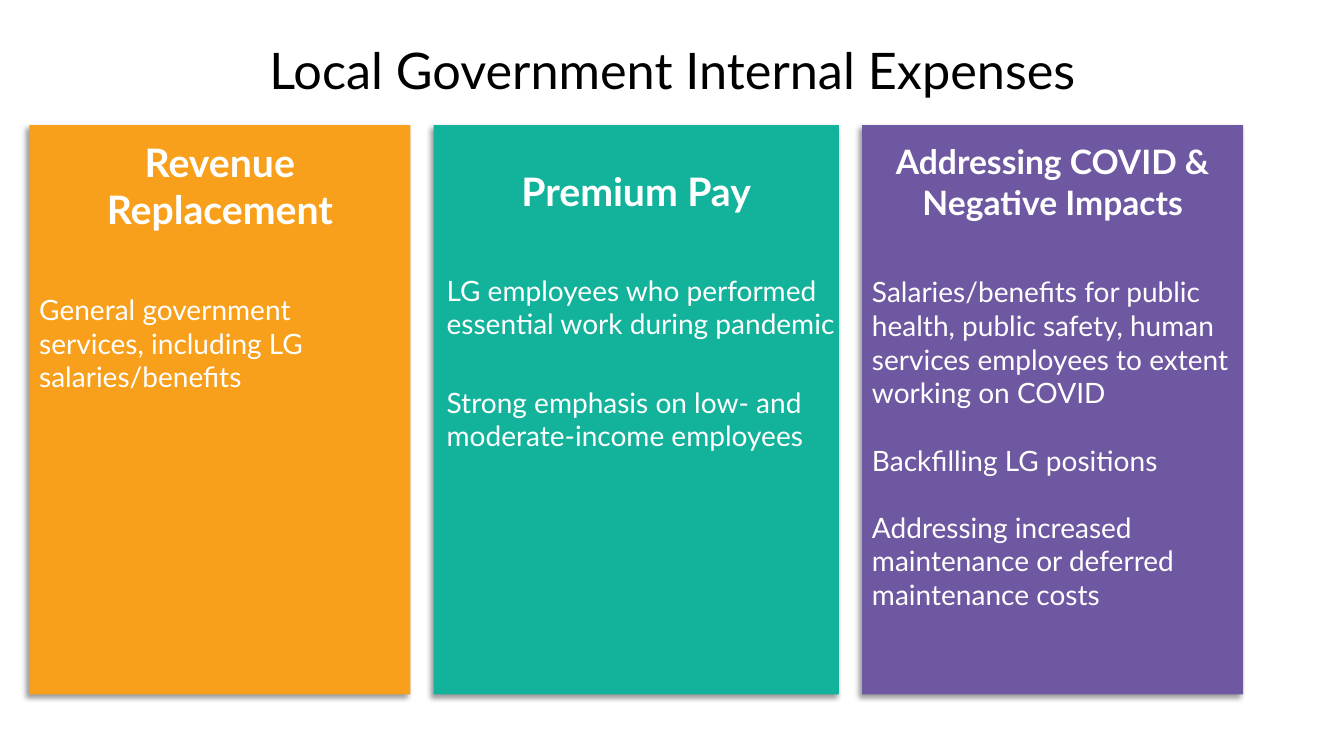
from lxml import etree
from pptx import Presentation
from pptx.dml.color import RGBColor
from pptx.enum import shapes, text
from pptx.oxml import ns
from pptx.util import Inches, Pt

FONT = "Lato"
BLACK = RGBColor(0x00, 0x00, 0x00)
WHITE = RGBColor(0xFF, 0xFF, 0xFF)
ORANGE = RGBColor(0xF8, 0xA0, 0x1B)
TEAL = RGBColor(0x13, 0xB3, 0x9B)
PURPLE = RGBColor(0x6E, 0x58, 0xA1)

PANEL_TOP, PANEL_HEIGHT = 1.24, 5.65


def write(para, words, size, color=WHITE, bold=False, align=text.PP_ALIGN.LEFT,
          before=0, indent=0):
    """Fill a paragraph with one formatted, unbulleted run."""
    props = para._p.get_or_add_pPr()
    props.set("marL", str(Inches(indent)))
    props.set("indent", "0")
    etree.SubElement(props, ns.qn("a:buNone"))
    para.alignment = align
    para.space_before = Pt(before)
    span = para.add_run()
    span.text = words
    span.font.name = FONT
    span.font.size = Pt(size)
    span.font.bold = bold
    span.font.color.rgb = color


def cast_shadow(box):
    """Give the box a soft shadow toward its lower left."""
    box.shadow.inherit = False
    effects = box._element.spPr.find(ns.qn("a:effectLst"))
    shadow = etree.SubElement(
        effects, ns.qn("a:outerShdw"), blurRad=str(Pt(4)), dist=str(Pt(3)),
        dir=str(135 * 60000), algn="tr", rotWithShape="0")
    tint = etree.SubElement(shadow, ns.qn("a:srgbClr"), val=str(BLACK))
    etree.SubElement(tint, ns.qn("a:alpha"), val="40000")


class ExpensePage:
    def __init__(self, deck):
        self.page = deck.slides.add_slide(deck.slide_layouts[1])

    def place(self, box, left, top, width, height):
        box.left, box.top = Inches(left), Inches(top)
        box.width, box.height = Inches(width), Inches(height)

    def frame(self, box, anchor, side=0.1, top=0.07):
        frame = box.text_frame
        frame.word_wrap = True
        frame.auto_size = text.MSO_AUTO_SIZE.NONE
        frame.vertical_anchor = anchor
        frame.margin_left = frame.margin_right = Inches(side)
        frame.margin_top, frame.margin_bottom = Inches(top), Inches(0.07)
        return frame

    def title(self, words):
        box = self.page.shapes.title
        self.place(box, 0.67, 0.3, 12, 0.78)
        frame = self.frame(box, text.MSO_ANCHOR.MIDDLE, side=0)
        write(frame.paragraphs[0], words, 36, BLACK, align=text.PP_ALIGN.CENTER)

    def rectangle(self):
        return self.page.shapes.add_shape(shapes.MSO_SHAPE.RECTANGLE, 0, 0, 0, 0)

    def body(self):
        return self.page.placeholders[1]

    def panel(self, box, left, width, color, heading, items, size=28, inset=0.13,
              lead=42, gap=24, side=0.1, indent=0):
        """Style a column; lead and gap are the points above its items."""
        self.place(box, left, PANEL_TOP, width, PANEL_HEIGHT)
        box.fill.solid()
        box.fill.fore_color.rgb = color
        box.line.fill.background()
        cast_shadow(box)
        frame = self.frame(box, text.MSO_ANCHOR.TOP, side, inset)
        write(frame.paragraphs[0], heading, size, bold=True,
              align=text.PP_ALIGN.CENTER)
        for number, item in enumerate(items):
            write(frame.add_paragraph(), item, 20, indent=indent,
                  before=gap if number else lead)


def main():
    deck = Presentation()
    deck.slide_width, deck.slide_height = Inches(13.33), Inches(7.5)
    page = ExpensePage(deck)
    page.title("Local Government Internal Expenses")
    page.panel(page.rectangle(), 0.29, 3.78, ORANGE, "Revenue Replacement",
               ["General government services, including LG salaries/benefits"],
               lead=43)
    page.panel(page.body(), 4.3, 4.02, TEAL, "Premium Pay",
               ["LG employees who performed essential work during pandemic",
                "Strong emphasis on low- and moderate-income employees"],
               inset=0.42, gap=32, side=0, indent=0.13)
    page.panel(page.rectangle(), 8.55, 3.78, PURPLE,
               "Addressing COVID & Negative Impacts",
               ["Salaries/benefits for public health, public safety, human "
                "services employees to extent working on COVID",
                "Backfilling LG positions",
                "Addressing increased maintenance or deferred maintenance costs"],
               size=24, inset=0.16, lead=38)
    deck.save("out.pptx")


if __name__ == "__main__":
    main()
